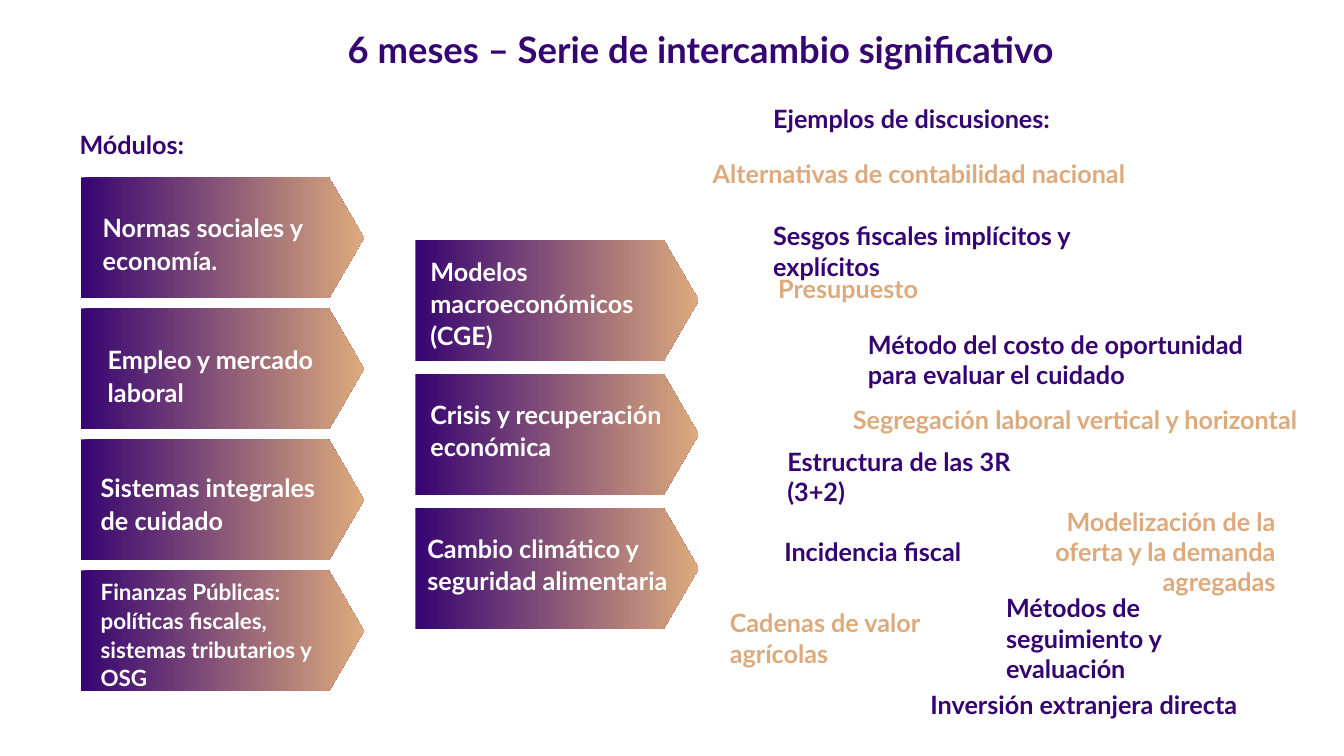
from pptx import Presentation
from pptx.dml.color import RGBColor
from pptx.enum.shapes import MSO_SHAPE
from pptx.enum.text import MSO_ANCHOR, MSO_AUTO_SIZE, PP_ALIGN
from pptx.util import Inches, Pt

COLORS = {"purple": "360472", "sand": "DDAA7D", "white": "FFFFFF"}
FONT = "Lato"


def color(name):
    return RGBColor.from_string(COLORS[name])


def write(frame, text, size=18, ink="purple", align=PP_ALIGN.LEFT,
          anchor=MSO_ANCHOR.TOP, spacing=1.0):
    """Fill a text frame with bold text, one paragraph per line."""
    frame.word_wrap = True
    frame.auto_size = MSO_AUTO_SIZE.NONE
    frame.vertical_anchor = anchor
    frame.text = text
    for para in frame.paragraphs:
        para.alignment = align
        para.line_spacing = spacing
        para.space_before = Pt(0)
        font = para.runs[0].font
        font.name, font.size, font.bold = FONT, Pt(size), True
        font.color.rgb = color(ink)


class Deck:
    def __init__(self):
        self.file = Presentation()
        self.file.slide_width = Inches(13.33)
        self.file.slide_height = Inches(7.5)
        self.slide = self.file.slides.add_slide(self.file.slide_layouts[5])

    def title(self, text, left, top, width, height):
        title = self.slide.shapes.title
        title.left, title.top = Inches(left), Inches(top)
        title.width, title.height = Inches(width), Inches(height)
        write(title.text_frame, text, size=26, align=PP_ALIGN.CENTER,
              anchor=MSO_ANCHOR.MIDDLE)

    def arrow(self, left, top):
        """Draw a module arrow fading from purple to sand."""
        arrow = self.slide.shapes.add_shape(
            MSO_SHAPE.PENTAGON, Inches(left), Inches(top), Inches(2.81), Inches(1.2))
        arrow.adjustments[0] = 0.29
        arrow.shadow.inherit = False
        arrow.line.fill.background()
        arrow.fill.gradient()
        arrow.fill.gradient_angle = 0
        for stop, name in zip(arrow.fill.gradient_stops, ("purple", "sand")):
            stop.color.rgb = color(name)

    def text(self, text, left, top, width, height=0.4, **style):
        box = self.slide.shapes.add_textbox(
            Inches(left), Inches(top), Inches(width), Inches(height))
        write(box.text_frame, text, **style)


# Arrow columns: left, first top, step, then labels as
# text, left, top, width, height, size
COLUMNS = [
    (0.8, 1.76, 1.3, [
        ("Normas sociales y economía.", 0.92, 2.04, 2.42, 0.73, 18),
        ("Empleo y mercado laboral", 0.97, 3.35, 2.68, 0.73, 18),
        ("Sistemas integrales de cuidado", 0.9, 4.62, 2.42, 0.74, 18),
        ("Finanzas Públicas: políticas fiscales, sistemas tributarios y OSG",
         0.9, 5.67, 2.71, 1.23, 16),
    ]),
    (4.12, 2.38, 1.33, [
        ("Modelos macroeconómicos\n(CGE)", 4.17, 2.47, 2.75, 1.04, 18),
        ("Crisis y recuperación económica", 4.17, 3.89, 2.7, 0.74, 18),
        ("Cambio climático y seguridad alimentaria", 4.14, 5.22, 2.93, 1.04, 18),
    ]),
]

# Text, left, top, width, height
HEADS = [
    ("Módulos:", 0.69, 1.23, 1.35, 0.4),
    ("Ejemplos de discusiones:", 7.57, 0.98, 3.35, 0.4),
]
TOPICS = {
    "purple": [
        ("Sesgos fiscales implícitos y explícitos", 7.57, 2.14, 4.09, 0.4),
        ("Método del costo de oportunidad\npara evaluar el cuidado",
         8.51, 3.22, 4, 0.71),
        ("Estructura de las 3R (3+2)", 7.71, 4.38, 3.02, 0.4),
        ("Incidencia fiscal", 7.68, 5.27, 2.19, 0.4),
        ("Métodos de seguimiento y evaluación", 9.88, 5.83, 1.8, 0.71),
        ("Inversión extranjera directa", 9.13, 6.79, 3.6, 0.4),
    ],
    "sand": [
        ("Alternativas de contabilidad nacional", 6.97, 1.52, 4.33, 0.4),
        ("Presupuesto", 7.62, 2.66, 3.02, 0.4),
        ("Segregación laboral vertical y horizontal", 8.36, 3.96, 4.81, 0.4),
        ("Cadenas de valor agrícolas", 7.14, 5.98, 3.07, 0.71),
    ],
}


def main():
    deck = Deck()
    deck.title("6 meses – Serie de intercambio significativo", 1.74, 0.22, 10.43, 0.54)
    for left, top, step, labels in COLUMNS:
        for row, (*label, size) in enumerate(labels):
            deck.arrow(left, top + row * step)
            deck.text(*label, size=size, ink="white", spacing=1.07)
    for head in HEADS:
        deck.text(*head)
    for ink, topics in TOPICS.items():
        for topic in topics:
            deck.text(*topic, ink=ink)
    deck.text("Modelización de la oferta y la demanda agregadas",
              9.92, 4.97, 2.83, 0.71, ink="sand", align=PP_ALIGN.RIGHT)
    deck.file.save("out.pptx")


if __name__ == "__main__":
    main()
